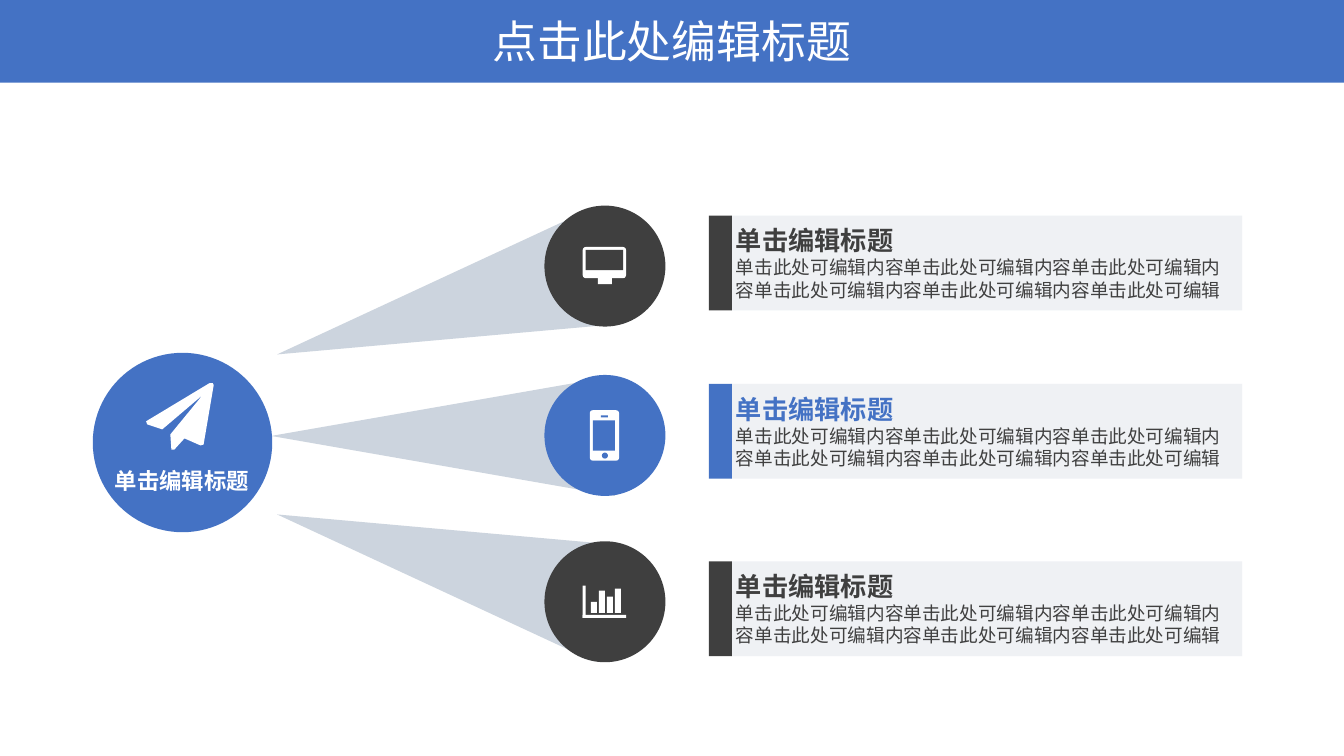
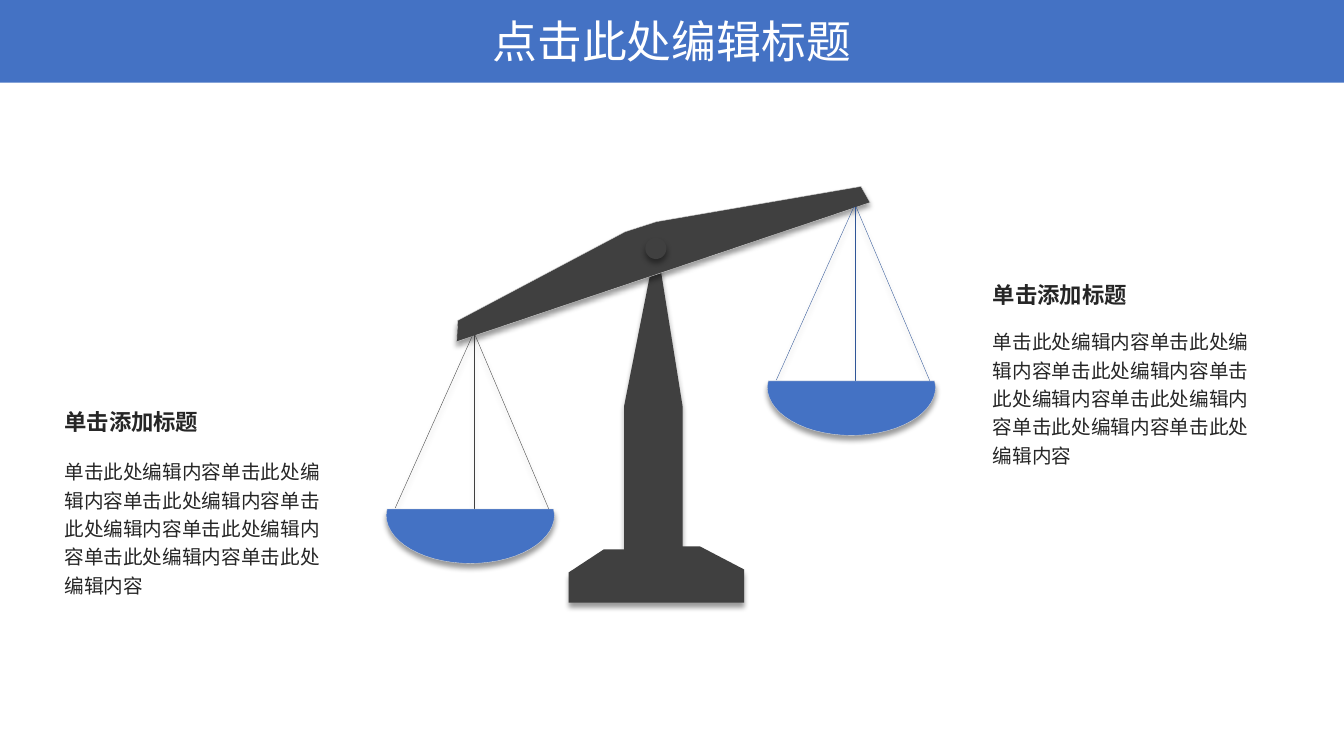
from math import cos, pi, sin

from lxml import etree
from pptx import Presentation
from pptx import util as u
from pptx.dml.color import RGBColor
from pptx.enum import shapes, text
from pptx.oxml.ns import qn

# Shared look
W, H = 13.33, 7.5
BLUE, DARK, BEAM, PANEL = "4472C4", "3F3F3F", "CCD4DE", "EBEEF2"
STEEL, STRING, EDGE, INK, WHITE = "404040", "2F5597", "D7D7D7", "262626", "FFFFFF"
FONT = "Noto Sans CJK SC"
LEADING = 1.2
RECT, OVAL, ROUND, MERGE = (
    shapes.MSO_SHAPE.RECTANGLE, shapes.MSO_SHAPE.OVAL,
    shapes.MSO_SHAPE.ROUNDED_RECTANGLE, shapes.MSO_SHAPE.FLOWCHART_MERGE)
HEADING = "点击此处编辑标题"

# Slide 1 content: icon parts are (shape, dx, dy, width, height, is cut out)
HUB_LABEL = "单击编辑标题"
CARD_TITLE = "单击编辑标题"
CARD_BODY = "单击此处可编辑内容" * 5 + "单击此处可编辑"
MONITOR = [(ROUND, -.22, -.19, .43, .31, False), (RECT, -.19, -.16, .37, .2, True),
           (RECT, -.07, .11, .14, .07, False)]
PHONE = [(ROUND, -.15, -.25, .29, .5, False), (RECT, -.12, -.15, .22, .3, True),
         (RECT, -.04, -.2, .07, .02, True), (OVAL, -.03, .17, .06, .06, True)]
BARS = [(RECT, -.22, -.16, .03, .32, False), (RECT, -.22, .13, .43, .03, False)] + [
    (RECT, -.14 + .08 * i, .11 - h, .06, h, False)
    for i, h in enumerate((.11, .22, .16, .24))]
# (beam top, beam rotation, disc top, card top, accent, icon)
BRANCHES = [(1.37, 75, 2.04, 2.14, DARK, MONITOR),
            (2.62, 90, 3.72, 3.81, BLUE, PHONE),
            (3.84, 105, 5.37, 5.57, DARK, BARS)]
PLANE = [(2.12, 3.82), (2.02, 4.41), (1.99, 4.42), (1.83, 4.35), (1.73, 4.46),
         (1.7, 4.46), (1.69, 4.31), (2.01, 3.92), (1.61, 4.26), (1.46, 4.21),
         (1.45, 4.18), (2.08, 3.8), (2.11, 3.8)]

# Slide 2 content
SIDE_TITLE = "单击添加标题"
SIDE_BODY = "单击此处编辑内容" * 7
STAND = [(6.51, 2.41), (6.77, 4.03), (6.77, 5.42), (6.94, 5.42), (7.38, 5.65),
         (7.38, 5.98), (5.64, 5.98), (5.64, 5.68), (5.99, 5.45), (6.19, 5.45),
         (6.19, 4.03)]
LEVER = [(4.53, 3.39), (8.63, 2.01), (8.54, 1.85), (6.51, 2.2), (6.2, 2.3), (4.54, 3.18)]
# (hook x, hook y, string colour, text left, title top, body top)
SIDES = [(8.48, 2.05, STRING, 9.75, 2.74, 3.18),
         (4.7, 3.32, STEEL, .54, 4, 4.47)]
STRING_ENDS = [(.01, .76, 1.77), (0, 0, 1.76), (-.01, -.78, 1.72)]
PAN_W, PAN_H, PAN_RIM = 1.67, .54, .06


def rgb(value):
    return RGBColor.from_string(value)


def inches(*values):
    return [u.Inches(v) for v in values]


def set_effect(sp, shadow):
    """Replace the theme shadow by none, or by a soft one below the shape."""
    effects = etree.SubElement(sp._element.spPr, qn("a:effectLst"))
    if shadow:
        outer = etree.SubElement(effects, qn("a:outerShdw"), blurRad=str(u.Pt(4)),
                                 dist=str(u.Pt(3)), dir="5400000", algn="t", rotWithShape="0")
        color = etree.SubElement(outer, qn("a:srgbClr"), val="000000")
        etree.SubElement(color, qn("a:alpha"), val="40000")


def paint(sp, fill, line=None, shadow=False, opacity=None):
    sp.fill.solid()
    sp.fill.fore_color.rgb = rgb(fill)
    if opacity:
        color = sp._element.spPr.find(".//" + qn("a:srgbClr"))
        etree.SubElement(color, qn("a:alpha"), val=str(opacity * 1000))
    if line:
        sp.line.color.rgb = rgb(line)
        sp.line.width = u.Pt(.25)
    else:
        sp.line.fill.background()
    set_effect(sp, shadow)
    return sp


def add_shape(s, kind, box, fill, **style):
    return paint(s.shapes.add_shape(kind, *inches(*box)), fill, **style)


def add_outline(s, points, fill, **style):
    start, *rest = [inches(*pt) for pt in points]
    builder = s.shapes.build_freeform(*start)
    builder.add_line_segments(rest, close=True)
    return paint(builder.convert_to_shape(), fill, **style)


def add_line(s, start, end, color):
    line = s.shapes.add_connector(shapes.MSO_CONNECTOR.STRAIGHT, *inches(*start, *end))
    line.line.color.rgb = rgb(color)
    line.line.width = u.Pt(.25)
    set_effect(line, True)


def add_text(s, box, paragraphs, inset=True, center=False, leading=LEADING):
    """Each paragraph is (text, size, colour, bold)."""
    tf = s.shapes.add_textbox(*inches(*box)).text_frame
    frame = {"word_wrap": True, "auto_size": text.MSO_AUTO_SIZE.SHAPE_TO_FIT_TEXT}
    if not inset:
        frame.update(dict.fromkeys(
            ("margin_left", "margin_top", "margin_right", "margin_bottom"), 0))
    for name, value in frame.items():
        setattr(tf, name, value)
    for i, (words, size, color, bold) in enumerate(paragraphs):
        p = tf.add_paragraph() if i else tf.paragraphs[0]
        p.alignment = text.PP_ALIGN.CENTER if center else text.PP_ALIGN.LEFT
        p.line_spacing = u.Pt(round(size * leading, 1))
        r = p.add_run()
        r.text = words
        for name, value in {"name": FONT, "size": u.Pt(size), "bold": bold}.items():
            setattr(r.font, name, value)
        r.font.color.rgb = rgb(color)
        etree.SubElement(r.font._element, qn("a:ea"), typeface=FONT)


def new_slide(prs):
    s = prs.slides.add_slide(prs.slide_layouts[6])
    add_shape(s, RECT, (0, 0, W, .82), BLUE)
    add_text(s, ((W - 4.01) / 2, .09, 4.01, .64), [(HEADING, 32, WHITE, False)], center=True)
    return s


def branches_slide(prs):
    s = new_slide(prs)
    disc = 1.2
    for beam_top, turn, disc_top, card_top, accent, icon in BRANCHES:
        # Beam, disc and icon
        add_shape(s, MERGE, (3.8, beam_top, 1.19, 3.41), BEAM).rotation = turn
        add_shape(s, OVAL, (5.4, disc_top, disc, disc), accent)
        cx, cy = 5.4 + disc / 2, disc_top + disc / 2
        for kind, dx, dy, w, h, cut in icon:
            part = add_shape(s, kind, (cx + dx, cy + dy, w, h), accent if cut else WHITE)
            if kind == ROUND:
                part.adjustments[0] = .1
        # Card
        add_shape(s, RECT, (7.25, card_top, 5.07, .94), PANEL, opacity=80)
        add_shape(s, RECT, (7.03, card_top, .23, .94), accent)
        add_text(s, (7.3, card_top + .09, 4.94, .76),
                 [(CARD_TITLE, 18.7, accent, True), (CARD_BODY, 13.3, STEEL, False)],
                 inset=False)
    # Hub
    add_shape(s, OVAL, (.92, 3.5, 1.78, 1.78), BLUE)
    add_outline(s, PLANE, WHITE)
    add_text(s, (1.07, 4.63, 1.47, .27), [(HUB_LABEL, 16, WHITE, True)],
             inset=False, center=True)


def pan_points(left, top, steps=28):
    """A flat rim over the lower half of an ellipse."""
    rx, ry = PAN_W / 2, PAN_H - PAN_RIM
    bowl = [(left + rx - rx * cos(pi * i / steps), top + PAN_RIM + ry * sin(pi * i / steps))
            for i in range(steps + 1)]
    return [(left + .01, top), *bowl, (left + PAN_W - .01, top)]


def scales_slide(prs):
    s = new_slide(prs)
    # Stand, lever and pivot
    add_outline(s, STAND, STEEL, shadow=True)
    add_outline(s, LEVER, STEEL, line=EDGE, shadow=True)
    add_shape(s, OVAL, (6.4, 2.36, .21, .21), STEEL, shadow=True)
    # Pans with their texts
    for x, y, color, left, title_top, body_top in SIDES:
        for shift, dx, dy in STRING_ENDS:
            add_line(s, (x + shift, y), (x + dx, y + dy), color)
        add_outline(s, pan_points(x - .87, y + 1.73), BLUE, line=EDGE, shadow=True)
        add_text(s, (left, title_top, 1.82, .37), [(SIDE_TITLE, 16, INK, True)])
        add_text(s, (left, body_top, 2.89, 1.51), [(SIDE_BODY, 14, INK, False)],
                 leading=LEADING ** 2)


def main():
    prs = Presentation()
    prs.slide_width, prs.slide_height = inches(W, H)
    branches_slide(prs)
    scales_slide(prs)
    prs.save("out.pptx")


if __name__ == "__main__":
    main()
